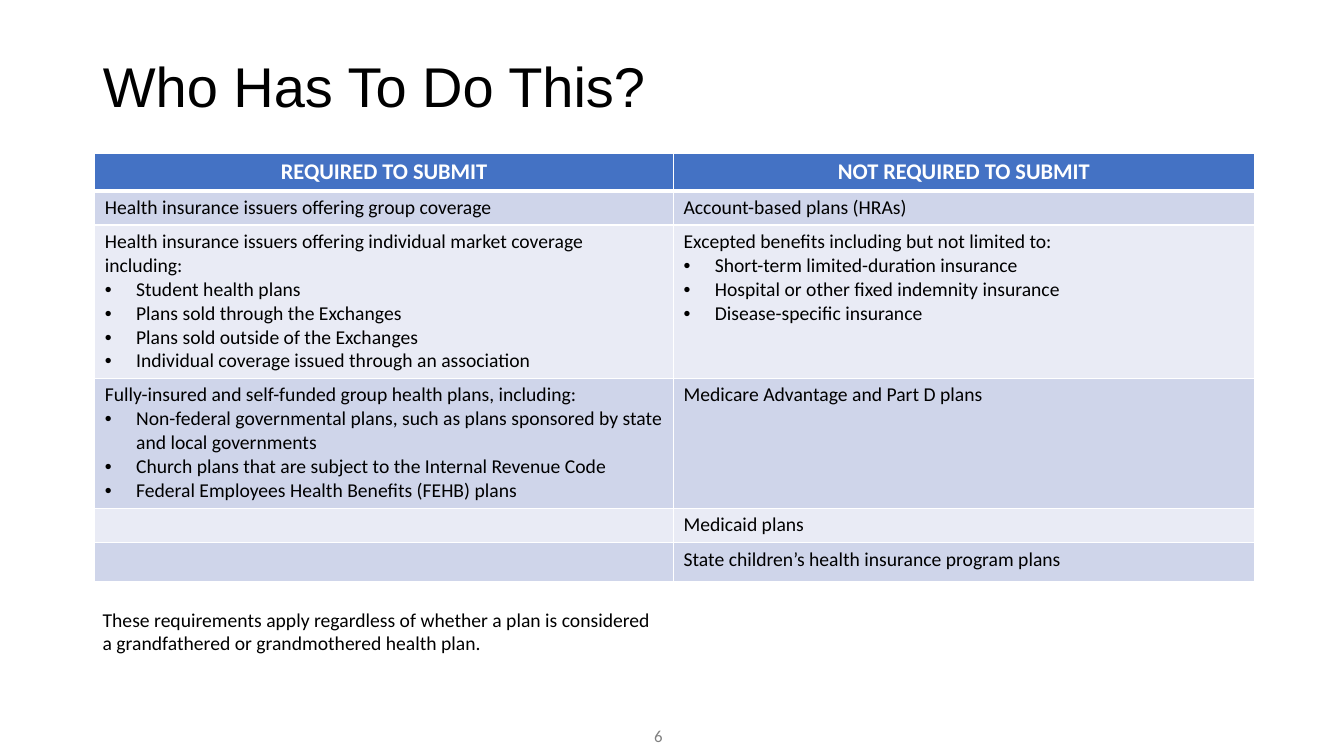
from dataclasses import dataclass

from lxml import etree
from pptx import Presentation
from pptx.dml.color import RGBColor
from pptx.enum.text import MSO_ANCHOR, MSO_AUTO_SIZE, PP_ALIGN
from pptx.oxml.ns import qn
from pptx.util import Inches, Pt

LEFT, CENTER, RIGHT = PP_ALIGN.LEFT, PP_ALIGN.CENTER, PP_ALIGN.RIGHT
TOP, MIDDLE = MSO_ANCHOR.TOP, MSO_ANCHOR.MIDDLE
FIT_SHAPE = MSO_AUTO_SIZE.SHAPE_TO_FIT_TEXT
TITLE_ONLY = 5


@dataclass(frozen=True)
class Theme:
    title_font: str = "Arial"
    body_font: str = "Calibri"
    text: str = "000000"
    white: str = "FFFFFF"
    muted: str = "808080"
    header_fill: str = "4472C4"
    bands: tuple = ("CFD5EA", "E9EBF5")
    title_size: int = 40
    header_size: int = 16
    body_size: int = 14
    number_size: int = 12


THEME = Theme()

COLUMN_WIDTHS = (5.74, 5.76)
ROW_HEIGHTS = (0.36, 0.34, 1.52, 1.29, 0.34, 0.39)
BULLET_INDENT = 0.31

# Each cell is a lead line followed by its bulleted items
HEADERS = ("REQUIRED TO SUBMIT", "NOT REQUIRED TO SUBMIT")
PLAN_ROWS = (
    (("Health insurance issuers offering group coverage",),
     ("Account-based plans (HRAs)",)),
    (("Health insurance issuers offering individual market coverage including:",
      "Student health plans",
      "Plans sold through the Exchanges",
      "Plans sold outside of the Exchanges",
      "Individual coverage issued through an association"),
     ("Excepted benefits including but not limited to:",
      "Short-term limited-duration insurance",
      "Hospital or other fixed indemnity insurance",
      "Disease-specific insurance")),
    (("Fully-insured and self-funded group health plans, including:",
      "Non-federal governmental plans, such as plans sponsored by "
      "state and local governments",
      "Church plans that are subject to the Internal Revenue Code",
      "Federal Employees Health Benefits (FEHB) plans"),
     ("Medicare Advantage and Part D plans",)),
    ((), ("Medicaid plans",)),
    ((), ("State children’s health insurance program plans",)),
)
FOOTNOTE = ("These requirements apply regardless of whether a plan is considered\n"
            "a grandfathered or grandmothered health plan.")


def format_runs(paragraph, size, color, font=THEME.body_font, bold=False):
    for run in paragraph.runs:
        run.font.name = font
        run.font.size = Pt(size)
        run.font.bold = bold
        run.font.color.rgb = RGBColor.from_string(color)


def place(shape, left, top, width, height):
    shape.left, shape.top = Inches(left), Inches(top)
    shape.width, shape.height = Inches(width), Inches(height)


def add_title(slide, text):
    title = slide.shapes.title
    place(title, 0.92, 0.16, 11.5, 1.45)
    frame = title.text_frame
    frame.text = text
    frame.vertical_anchor = MIDDLE
    heading = frame.paragraphs[0]
    heading.alignment = LEFT
    heading.line_spacing = 0.9
    format_runs(heading, THEME.title_size, THEME.text, THEME.title_font)


def add_label(slide, text, box, size, color, align=LEFT, anchor=TOP):
    label = slide.shapes.add_textbox(*map(Inches, box))
    frame = label.text_frame
    frame.word_wrap = True
    frame.vertical_anchor = anchor
    paragraph = frame.paragraphs[0]
    paragraph.text = text
    paragraph.alignment = align
    format_runs(paragraph, size, color)
    return label


def add_bullet(paragraph):
    properties = paragraph._p.get_or_add_pPr()
    properties.set("marL", str(Inches(BULLET_INDENT)))
    properties.set("indent", str(-Inches(BULLET_INDENT)))
    etree.SubElement(properties, qn("a:buFont"), typeface="Arial")
    etree.SubElement(properties, qn("a:buChar"), char="•")


def set_borders(cell, top=1, bottom=1):
    properties = cell._tc.get_or_add_tcPr()
    for side, width in (("L", 1), ("R", 1), ("T", top), ("B", bottom)):
        line = etree.SubElement(properties, qn(f"a:ln{side}"), w=str(Pt(width)))
        fill = etree.SubElement(line, qn("a:solidFill"))
        etree.SubElement(fill, qn("a:srgbClr"), val=THEME.white)


def set_fill(cell, color):
    cell.fill.solid()
    cell.fill.fore_color.rgb = RGBColor.from_string(color)


def fill_header(cell, text):
    set_borders(cell, bottom=3)
    set_fill(cell, THEME.header_fill)
    cell.text_frame.text = text
    heading = cell.text_frame.paragraphs[0]
    heading.alignment = CENTER
    format_runs(heading, THEME.header_size, THEME.white, bold=True)


def fill_plan_cell(cell, lines, row):
    set_borders(cell, top=3 if row == 1 else 1)
    set_fill(cell, THEME.bands[(row - 1) % 2])
    frame = cell.text_frame
    frame.text = "\n".join(lines)
    for index, paragraph in enumerate(frame.paragraphs):
        if index:
            add_bullet(paragraph)
        format_runs(paragraph, THEME.body_size, THEME.text)
    if not lines:
        # Keeps an empty cell from forcing a taller row
        etree.SubElement(frame.paragraphs[0]._p, qn("a:endParaRPr"),
                         sz=str(THEME.body_size * 100))


def add_plan_table(slide):
    table = slide.shapes.add_table(
        len(ROW_HEIGHTS), len(COLUMN_WIDTHS), Inches(0.94), Inches(1.52),
        Inches(sum(COLUMN_WIDTHS)), Inches(sum(ROW_HEIGHTS))).table
    for column, width in zip(table.columns, COLUMN_WIDTHS):
        column.width = Inches(width)
    for row, height in zip(table.rows, ROW_HEIGHTS):
        row.height = Inches(height)
    for column, text in enumerate(HEADERS):
        fill_header(table.cell(0, column), text)
    for row, plans in enumerate(PLAN_ROWS, start=1):
        for column, lines in enumerate(plans):
            fill_plan_cell(table.cell(row, column), lines, row)


def main():
    deck = Presentation()
    deck.slide_width, deck.slide_height = Inches(13.33), Inches(7.5)
    slide = deck.slides.add_slide(deck.slide_layouts[TITLE_ONLY])

    # Title and comparison table
    add_title(slide, "Who Has To Do This?")
    add_plan_table(slide)

    # Slide number and footnote
    add_label(slide, "6", (3.67, 7.1, 3, 0.4), THEME.number_size, THEME.muted,
              RIGHT, MIDDLE)
    footnote = add_label(slide, FOOTNOTE, (0.92, 5.98, 5.73, 0.57),
                         THEME.body_size, THEME.text)
    footnote.text_frame.auto_size = FIT_SHAPE

    deck.save("out.pptx")


if __name__ == "__main__":
    main()
